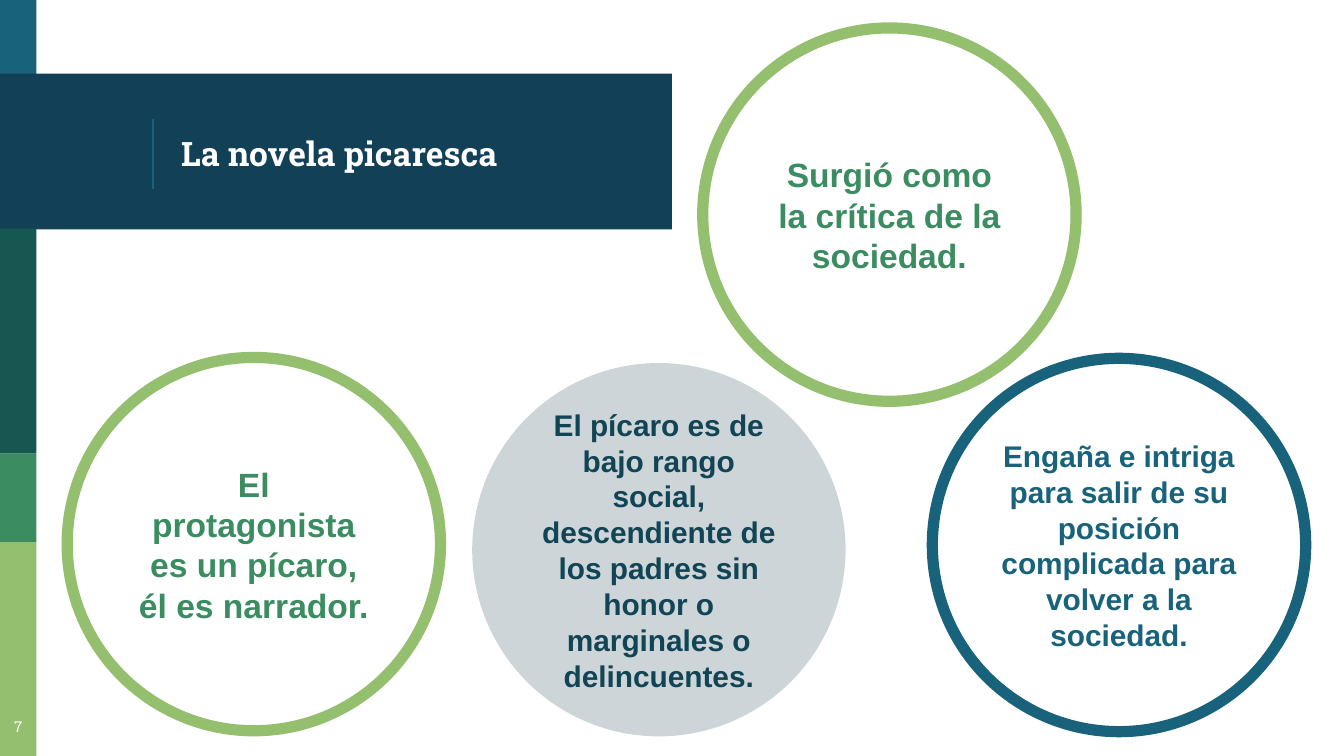
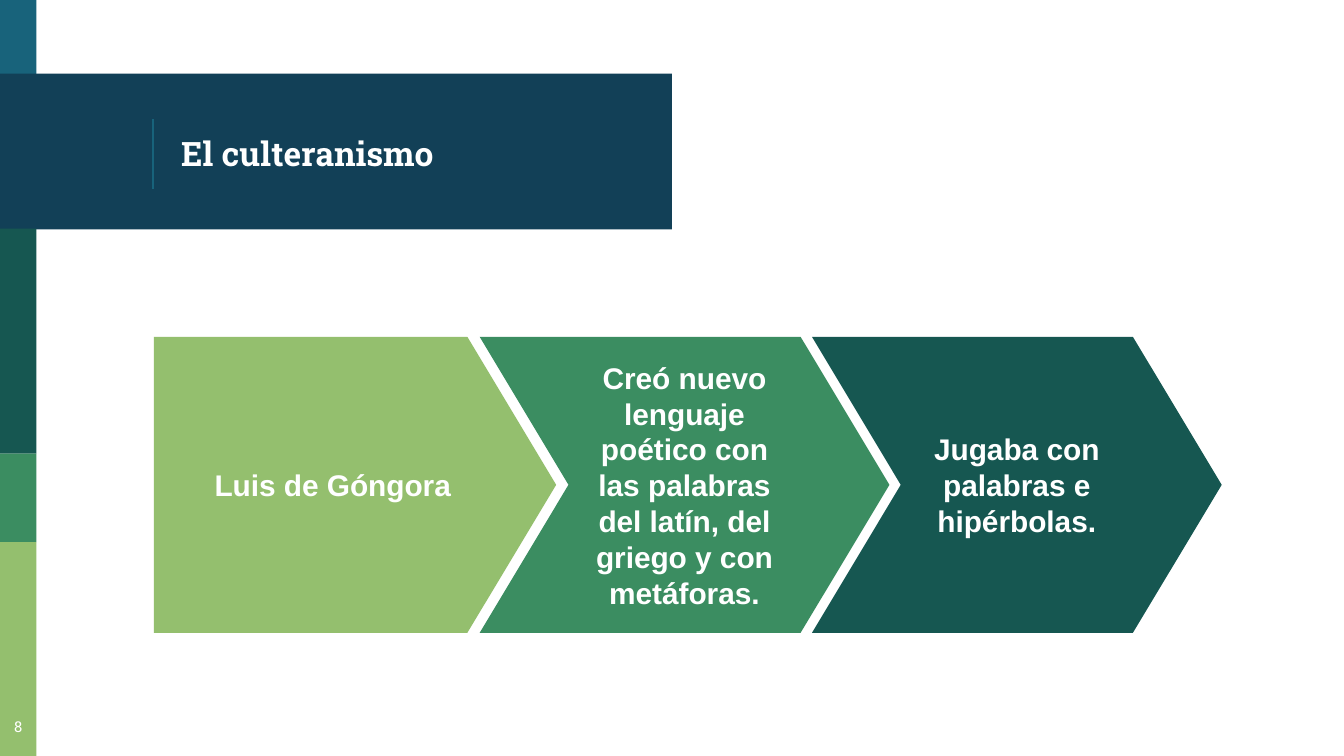
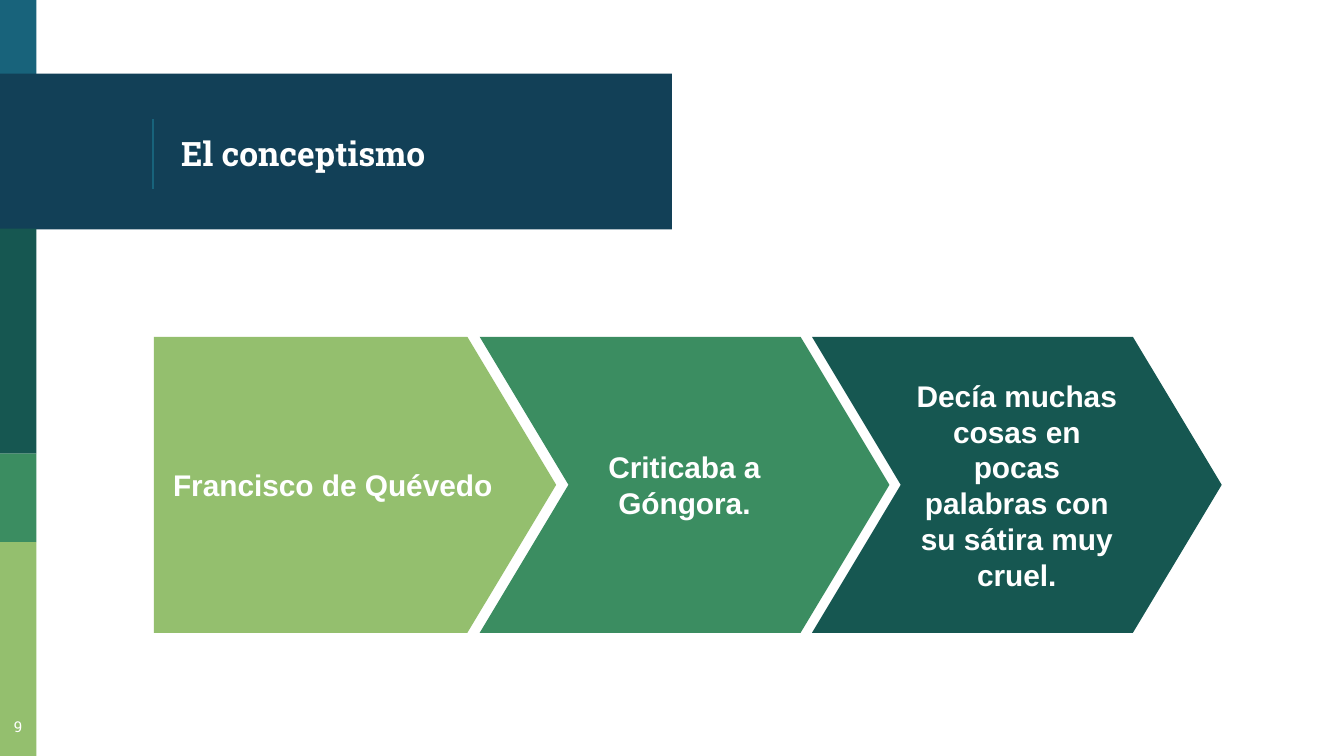
from lxml.etree import SubElement
from pptx import Presentation
from pptx.dml.color import RGBColor
from pptx.enum.shapes import MSO_CONNECTOR, MSO_SHAPE
from pptx.enum.text import MSO_ANCHOR, PP_ALIGN
from pptx.oxml.ns import qn
from pptx.util import Pt

COLORS = {
    "white": "FFFFFF",
    "blue": "18637B",
    "navy": "124057",
    "ink": "114454",
    "shade": "0E3142",
    "pine": "165751",
    "green": "3B8D61",
    "lime": "94BF6E",
}


def color(name):
    return RGBColor.from_string(COLORS[name])


def write(box, text, size=16, font="Arial", ink="white", bold=True,
          align=PP_ALIGN.CENTER, anchor=MSO_ANCHOR.MIDDLE):
    frame = box.text_frame
    frame.word_wrap = True
    frame.vertical_anchor = anchor
    frame.margin_left = frame.margin_right = Pt(7.2)
    frame.margin_top = frame.margin_bottom = Pt(7.2)
    para = frame.paragraphs[0]
    para.alignment = align
    span = para.add_run()
    span.text = text
    span.font.size = Pt(size)
    span.font.name = font
    span.font.bold = bold
    span.font.color.rgb = color(ink)


FIRST_NUMBER = 7
TITLES = ["La novela picaresca", "El culteranismo", "El conceptismo"]

BANDS = [
    (0, 19.5, 42, "blue"),
    (39.5, 360, 83.5, "navy"),
    (122.5, 19.5, 120.5, "pine"),
    (243, 19.5, 47.5, "green"),
    (290.5, 19.5, 114.5, "lime"),
]

CIRCLE_SIZE = 200
CIRCLES = [
    (376.5, 15, "lime", "green", 18, "Surgió como la crítica de la sociedad."),
    (499.5, 192, "blue", "blue", 16,
     "Engaña e intriga para salir de su posición complicada para volver a la sociedad."),
    (253, 194.5, None, "ink", 16,
     "El pícaro es de bajo rango social, descendiente de los padres sin honor "
     "o marginales o delincuentes."),
    (36, 191.5, "lime", "green", 18, "El protagonista es un pícaro, él es narrador."),
]

ARROWS = [
    (MSO_SHAPE.PENTAGON, 82.5, 215.5, "lime"),
    (MSO_SHAPE.CHEVRON, 257, 219.5, "green"),
    (MSO_SHAPE.CHEVRON, 435, 219.5, "pine"),
]
ARROW_TEXTS = [
    ["Luis de Góngora",
     "Creó nuevo lenguaje poético con las palabras del latín, del griego y con metáforas.",
     "Jugaba con palabras e hipérbolas."],
    ["Francisco de Quévedo",
     "Criticaba a Góngora.",
     "Decía muchas cosas en pocas palabras con su sátira muy cruel."],
]

deck = Presentation()
deck.slide_width = Pt(720)
deck.slide_height = Pt(405)

pages = []
for number, title in enumerate(TITLES, FIRST_NUMBER):
    page = deck.slides.add_slide(deck.slide_layouts[6])
    pages.append(page)
    for top, width, height, fill in BANDS:
        band = page.shapes.add_shape(MSO_SHAPE.RECTANGLE, 0, Pt(top), Pt(width), Pt(height))
        band.shadow.inherit = False
        band.fill.solid()
        band.fill.fore_color.rgb = color(fill)
        band.line.fill.background()

    rule = page.shapes.add_connector(MSO_CONNECTOR.STRAIGHT, Pt(82), Pt(64), Pt(82), Pt(101))
    rule.line.color.rgb = color("blue")
    rule.line.width = Pt(0.75)
    SubElement(rule._element.spPr, qn("a:effectLst"))

    title_box = page.shapes.add_textbox(Pt(90), Pt(42), Pt(253), Pt(80.5))
    write(title_box, title, size=18, font="Roboto Slab", align=PP_ALIGN.LEFT)
    number_box = page.shapes.add_textbox(Pt(-4), Pt(379.5), Pt(27.5), Pt(25))
    write(number_box, str(number), size=8, font="Roboto Slab", bold=False,
          anchor=MSO_ANCHOR.TOP)

for left, top, outline, ink, size, text in CIRCLES:
    circle = pages[0].shapes.add_shape(
        MSO_SHAPE.OVAL, Pt(left), Pt(top), Pt(CIRCLE_SIZE), Pt(CIRCLE_SIZE))
    circle.shadow.inherit = False
    if outline:
        circle.fill.background()
        circle.line.color.rgb = color(outline)
        circle.line.width = Pt(6)
    else:
        circle.fill.solid()
        circle.fill.fore_color.rgb = color("shade")
        tint = circle._element.spPr.find(qn("a:solidFill")).find(qn("a:srgbClr"))
        SubElement(tint, qn("a:alpha"), val="20000")
        circle.line.fill.background()
    write(circle, text, size=size, ink=ink)

for page, texts in zip(pages[1:], ARROW_TEXTS):
    for (kind, left, width, fill), text in zip(ARROWS, texts):
        arrow = page.shapes.add_shape(kind, Pt(left), Pt(180.5), Pt(width), Pt(158.5))
        arrow.adjustments[0] = 0.3
        arrow.shadow.inherit = False
        arrow.fill.solid()
        arrow.fill.fore_color.rgb = color(fill)
        arrow.line.fill.background()
        write(arrow, text)

deck.save("out.pptx")
